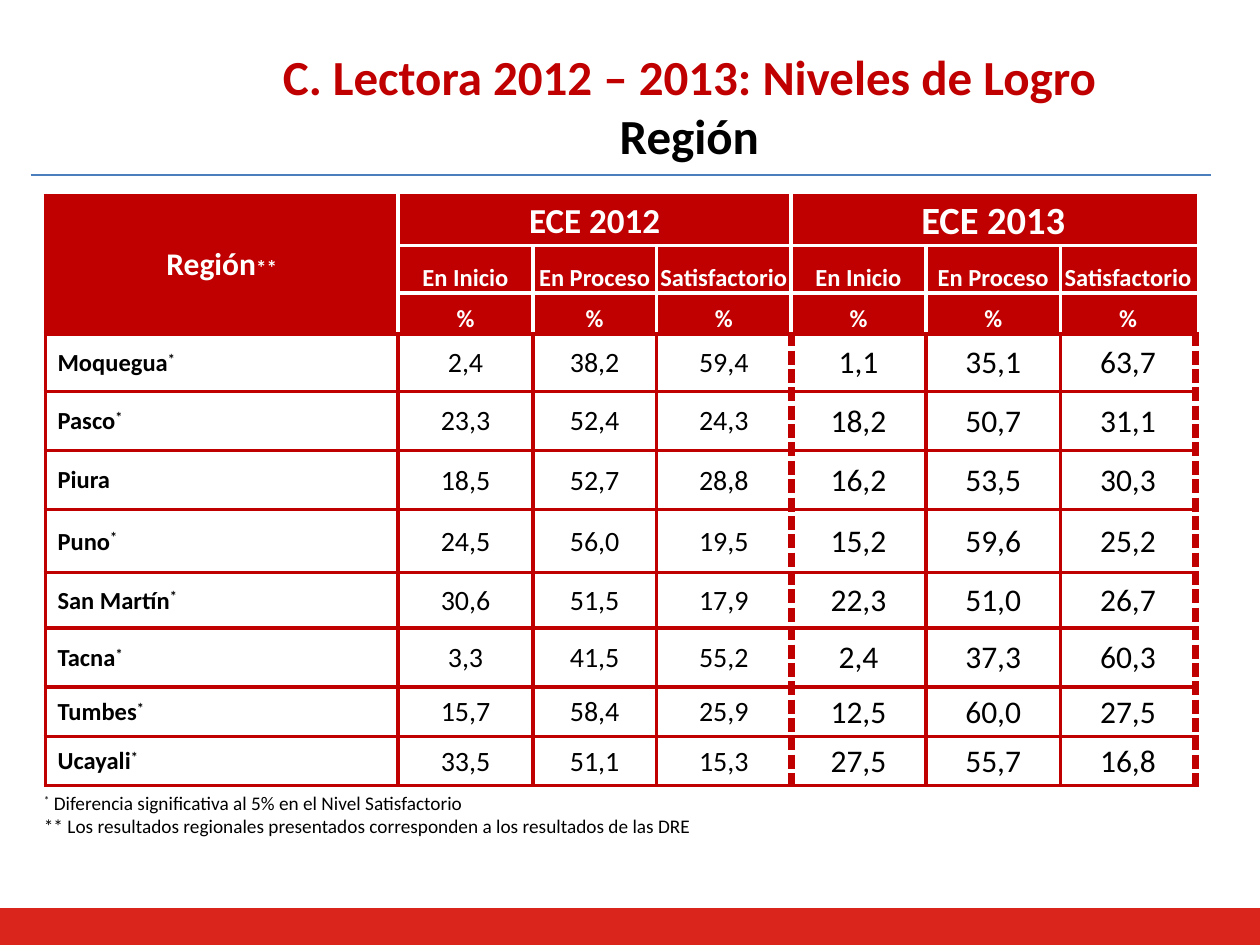
import pptx
import pptx.dml.color
import pptx.enum.shapes
import pptx.enum.text
import pptx.oxml
import pptx.oxml.ns
import pptx.util

Pt = pptx.util.Pt
ALIGN = pptx.enum.text.PP_ALIGN
ANCHOR = pptx.enum.text.MSO_ANCHOR

TITLE = ("C. Lectora 2012 – 2013: Niveles de Logro", "Región")
YEARS = ("ECE 2012", "ECE 2013")
LEVELS = ("En Inicio", "En Proceso", "Satisfactorio")
# Region, significant difference, 2012 values, 2013 values
REGIONS = [
    ("Moquegua", True, "2,4", "38,2", "59,4", "1,1", "35,1", "63,7"),
    ("Pasco", True, "23,3", "52,4", "24,3", "18,2", "50,7", "31,1"),
    ("Piura", False, "18,5", "52,7", "28,8", "16,2", "53,5", "30,3"),
    ("Puno", True, "24,5", "56,0", "19,5", "15,2", "59,6", "25,2"),
    ("San Martín", True, "30,6", "51,5", "17,9", "22,3", "51,0", "26,7"),
    ("Tacna", True, "3,3", "41,5", "55,2", "2,4", "37,3", "60,3"),
    ("Tumbes", True, "15,7", "58,4", "25,9", "12,5", "60,0", "27,5"),
    ("Ucayali", True, "33,5", "51,1", "15,3", "27,5", "55,7", "16,8"),
]
SIGNIFICANCE_NOTE = " Diferencia significativa al 5% en el Nivel Satisfactorio"
RESULTS_NOTE = "** Los resultados regionales presentados corresponden a los resultados de las DRE"

THEME = {
    "font": "Calibri", "red": "C00000", "white": "FFFFFF", "black": "000000",
    "rule": "4B7EBC", "footer": "DA251D",
    "title": 28, "corner": 18, "mark": 12, "years": (20, 22), "label": 14,
    "values": (16, 18), "note": 11,
}
PAGE_WIDTH, PAGE_HEIGHT = 720, 540
FOOTER_HEIGHT = 21
COLUMN_WIDTHS = [201.6, 77, 70.6, 77, 77, 77, 77]
ROW_HEIGHTS = [28.8, 27, 23.4, 32.8, 33.8, 33.8, 36, 31.7, 33.8, 28.1, 28.1]
HEADER_ROWS = 3
LEVEL_COUNT = len(LEVELS)


def colour(name):
    return pptx.dml.color.RGBColor.from_string(THEME[name])


def add_span(para, text, size, color="black", bold=False, raised=False):
    span = para.add_run()
    span.text = text
    span.font.name = THEME["font"]
    span.font.size = Pt(size)
    span.font.bold = bold
    span.font.color.rgb = colour(color)
    if raised:
        span.font._element.set("baseline", "30000")


def add_box(page, left, top, width, height, anchor=ANCHOR.TOP):
    box = page.shapes.add_textbox(Pt(left), Pt(top), Pt(width), Pt(height))
    box.text_frame.word_wrap = True
    box.text_frame.vertical_anchor = anchor
    return box.text_frame


def next_para(frame, index):
    return frame.add_paragraph() if index else frame.paragraphs[0]


def set_edge(cell, side, color, width, dash):
    namespace = pptx.oxml.ns.nsdecls("a")
    edge = pptx.oxml.parse_xml(
        f'<a:{side} {namespace} w="{Pt(width)}"><a:solidFill><a:srgbClr val="{THEME[color]}"/>'
        f'</a:solidFill><a:prstDash val="{dash}"/></a:{side}>')
    cell._tc.get_or_add_tcPr().append(edge)


def vertical_edge(row, line):
    """Style of the vertical grid line at the left of column number `line`."""
    starts_year = line in (1, 1 + LEVEL_COUNT)
    if row < HEADER_ROWS:
        inside = 0 < line < len(COLUMN_WIDTHS)
        return "white" if inside and (row or starts_year) else "red", 2.25, "solid"
    if line in (1 + LEVEL_COUNT, len(COLUMN_WIDTHS)):
        return "red", 4.5, "sysDash"
    return "red", 2.25, "solid"


def horizontal_edge(line, column):
    """Style of the horizontal grid line above row number `line`."""
    white = column > 0 and 0 < line < HEADER_ROWS
    return "white" if white else "red", 2.25, "solid"


def style_cell(cell, row, column):
    # Edges come before the fill in the cell properties
    set_edge(cell, "lnL", *vertical_edge(row, column))
    set_edge(cell, "lnR", *vertical_edge(row, column + 1))
    set_edge(cell, "lnT", *horizontal_edge(row, column))
    set_edge(cell, "lnB", *horizontal_edge(row + 1, column))
    if row < HEADER_ROWS:
        cell.fill.solid()
        cell.fill.fore_color.rgb = colour("red")
    else:
        cell.fill.background()
    region_name = row >= HEADER_ROWS and column == 0
    cell.margin_left = Pt(7 if region_name else 0.7)
    cell.margin_right = cell.margin_top = Pt(0.7)
    cell.margin_bottom = Pt(0)
    level_header = 0 < row < HEADER_ROWS and column > 0
    cell.vertical_anchor = ANCHOR.BOTTOM if level_header else ANCHOR.MIDDLE
    cell.text_frame.paragraphs[0].alignment = ALIGN.LEFT if region_name else ALIGN.CENTER


def add_results_table(page, left, top):
    table = page.shapes.add_table(
        len(ROW_HEIGHTS), len(COLUMN_WIDTHS), Pt(left), Pt(top),
        Pt(sum(COLUMN_WIDTHS)), Pt(sum(ROW_HEIGHTS))).table
    table.first_row = table.horz_banding = False
    for column, width in zip(table.columns, COLUMN_WIDTHS):
        column.width = Pt(width)
    for row, height in zip(table.rows, ROW_HEIGHTS):
        row.height = Pt(height)
    for row in range(len(ROW_HEIGHTS)):
        for column in range(len(COLUMN_WIDTHS)):
            style_cell(table.cell(row, column), row, column)

    def write(row, column, text, size, **style):
        para = table.cell(row, column).text_frame.paragraphs[0]
        add_span(para, text, size, **style)

    header = {"color": "white", "bold": True}
    table.cell(0, 0).merge(table.cell(HEADER_ROWS - 1, 0))
    write(0, 0, "Región", THEME["corner"], **header)
    write(0, 0, "**", THEME["mark"], **header)
    for index, year in enumerate(YEARS):
        first = 1 + index * LEVEL_COUNT
        table.cell(0, first).merge(table.cell(0, first + LEVEL_COUNT - 1))
        write(0, first, year, THEME["years"][index], **header)
        for column, level in enumerate(LEVELS, first):
            write(1, column, level, THEME["label"], **header)
            write(2, column, "%", THEME["label"], **header)
    for row, (region, significant, *values) in enumerate(REGIONS, HEADER_ROWS):
        write(row, 0, region, THEME["label"], bold=True)
        if significant:
            write(row, 0, "*", THEME["label"], bold=True, raised=True)
        for index, value in enumerate(values):
            write(row, index + 1, value, THEME["values"][index // LEVEL_COUNT])


def add_footer_bar(page):
    bar = page.shapes.add_shape(
        pptx.enum.shapes.MSO_SHAPE.RECTANGLE, 0, Pt(PAGE_HEIGHT - FOOTER_HEIGHT),
        Pt(PAGE_WIDTH), Pt(FOOTER_HEIGHT))
    bar.shadow.inherit = False
    bar.fill.solid()
    bar.fill.fore_color.rgb = colour("footer")
    bar.line.fill.background()


def add_title(page):
    frame = add_box(page, 70.6, 15, 646.6, 90, ANCHOR.MIDDLE)
    for index, (text, color) in enumerate(zip(TITLE, ("red", "black"))):
        para = next_para(frame, index)
        para.alignment = ALIGN.CENTER
        add_span(para, text, THEME["title"], color=color, bold=True)
    rule = page.shapes.add_connector(
        pptx.enum.shapes.MSO_CONNECTOR.STRAIGHT, Pt(17.5), Pt(100), Pt(692), Pt(100))
    rule.line.color.rgb = colour("rule")
    rule.line.width = Pt(0.75)
    rule._element.spPr.append(pptx.oxml.parse_xml(
        f'<a:effectLst {pptx.oxml.ns.nsdecls("a")}/>'))


def add_notes_below_table(page):
    frame = add_box(page, 18, 448.6, 680.4, 34)
    for index, (mark, text) in enumerate((("*", SIGNIFICANCE_NOTE), ("", RESULTS_NOTE))):
        para = next_para(frame, index)
        properties = para._p.get_or_add_pPr()
        properties.set("marL", str(Pt(7.2)))
        properties.set("indent", str(-Pt(7.2)))
        if mark:
            add_span(para, mark, THEME["note"], raised=True)
        add_span(para, text, THEME["note"])


def main():
    deck = pptx.Presentation()
    deck.slide_width, deck.slide_height = Pt(PAGE_WIDTH), Pt(PAGE_HEIGHT)
    page = deck.slides.add_slide(deck.slide_layouts[6])
    add_footer_bar(page)
    add_results_table(page, 25.9, 111.6)
    add_title(page)
    add_notes_below_table(page)
    deck.save("out.pptx")


if __name__ == "__main__":
    main()
